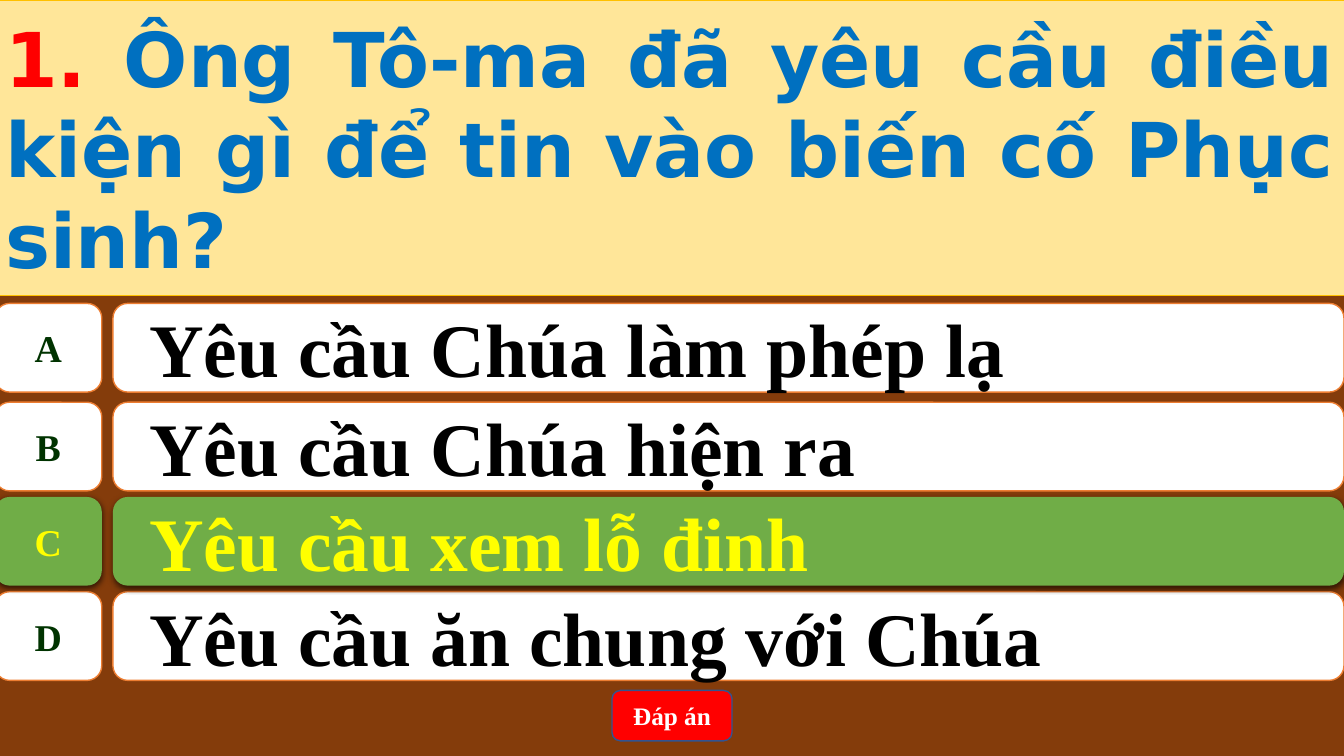
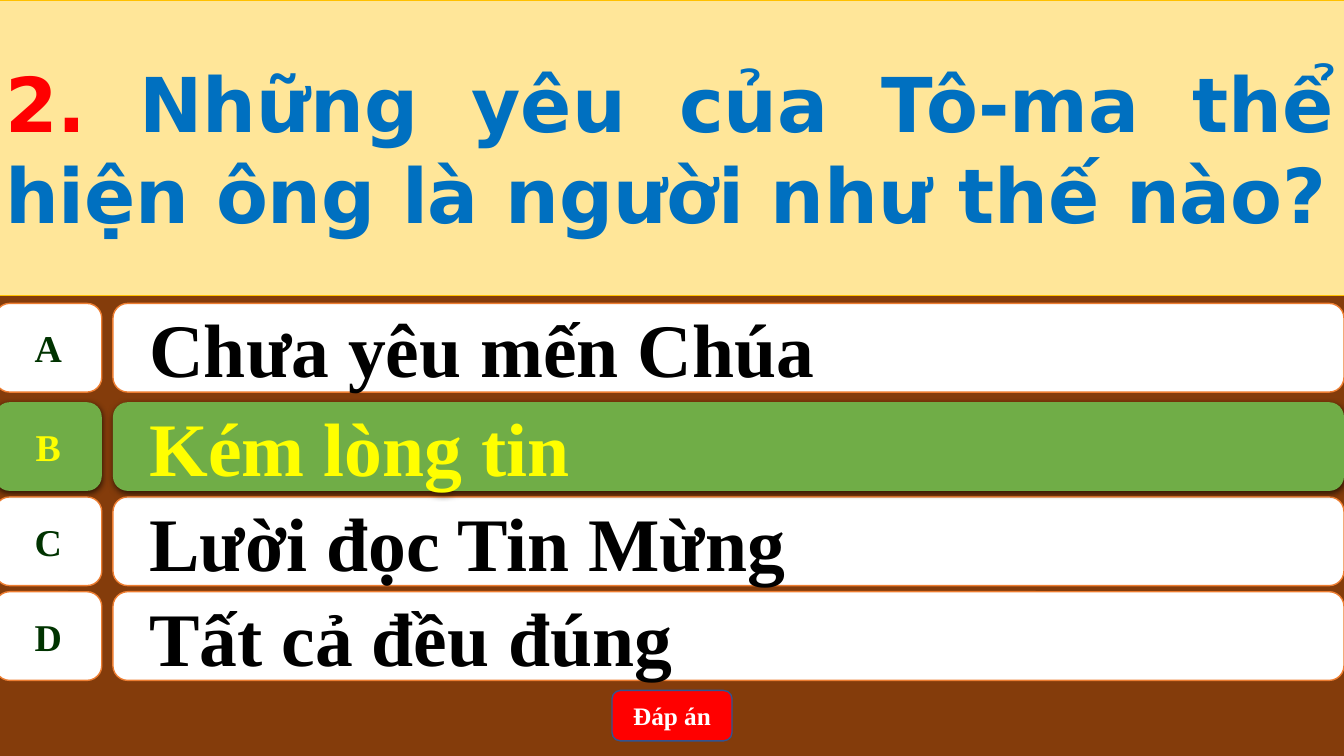
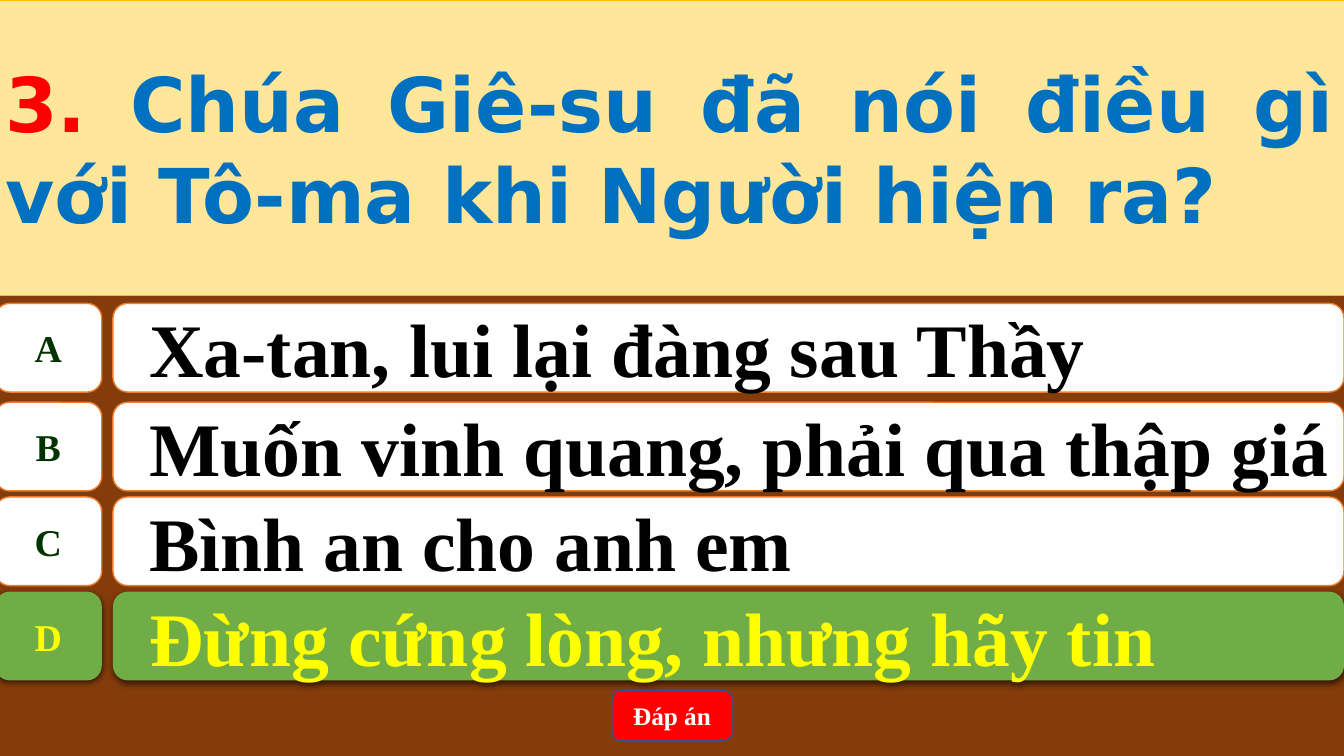
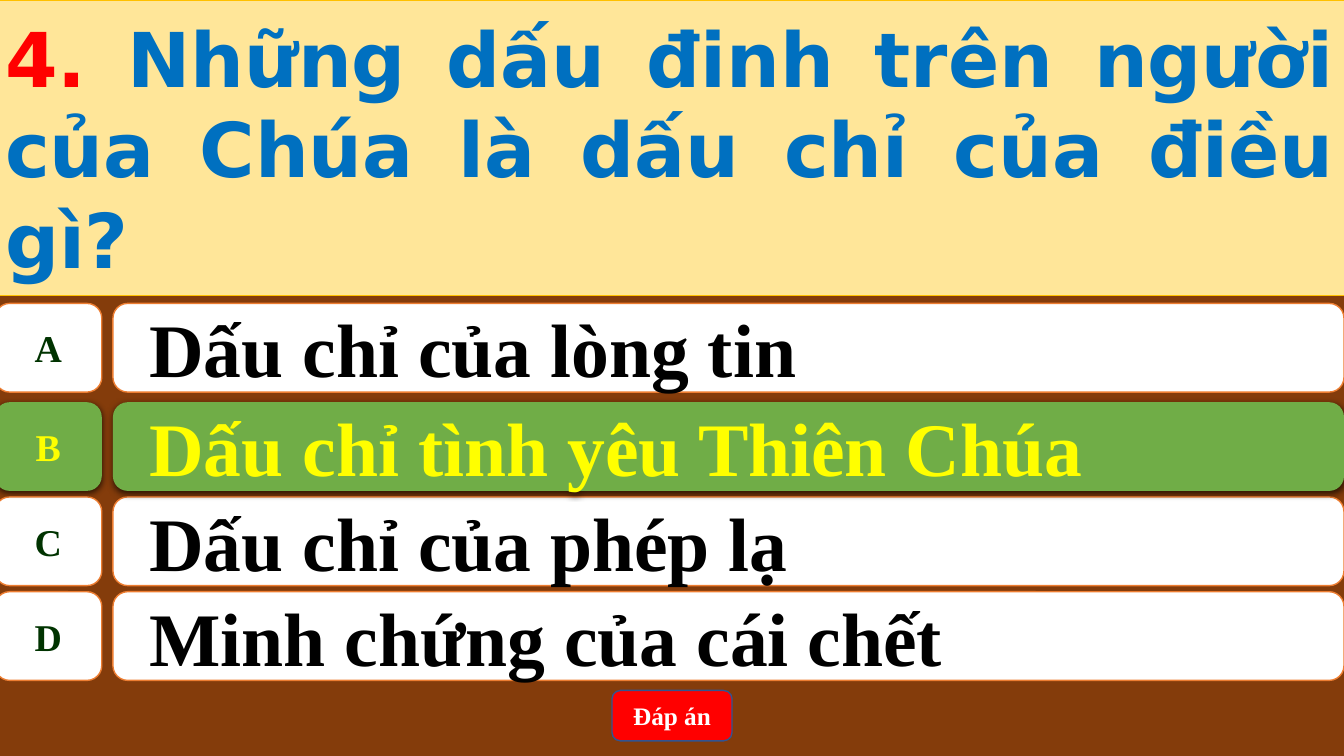
import dataclasses

import lxml.etree
import pptx
import pptx.dml.color
import pptx.enum.shapes
import pptx.enum.text
import pptx.oxml.ns
import pptx.util

EMU_PER_PX = 9144  # 100 px to the inch
ALIGN = pptx.enum.text.PP_ALIGN
SHAPE = pptx.enum.shapes.MSO_SHAPE
TITLE_ONLY = 5


@dataclasses.dataclass(frozen=True)
class Theme:
    background: str = "843C0B"
    band: str = "FFE699"
    band_line: str = "FFC000"
    number: str = "FF0000"
    question: str = "0070C0"
    row: str = "FFFFFF"
    row_line: str = "ED7D31"
    letter: str = "003300"
    answer: str = "000000"
    correct_row: str = "70AD47"
    correct_text: str = "FFFF00"
    button: str = "FF0000"
    button_line: str = "325491"
    button_text: str = "FFFFFF"
    shadow: str = "000000"
    question_font: str = "DejaVu Sans"
    answer_font: str = "Times New Roman"
    large: int = 54
    medium: int = 27
    small: int = 18


THEME = Theme()
LEFT, WIDTH = -5, 1339
BAND_HEIGHT = 293
ROW_TOPS = {"A": 301, "B": 399, "C": 493, "D": 587}
ROW_HEIGHT = 88
LETTER_WIDTH = 106
ANSWER_LEFT, ANSWER_WIDTH, ANSWER_INDENT = 112, 1221, 22

QUESTIONS = [
    ("Ông Tô-ma đã yêu cầu điều kiện gì để tin vào biến cố Phục sinh?", "C",
     ["Yêu cầu Chúa làm phép lạ", "Yêu cầu Chúa hiện ra",
      "Yêu cầu xem lỗ đinh", "Yêu cầu ăn chung với Chúa"]),
    ("Những yêu của Tô-ma thể hiện ông là người như thế nào?", "B",
     ["Chưa yêu mến Chúa", "Kém lòng tin",
      "Lười đọc Tin Mừng", "Tất cả đều đúng"]),
    ("Chúa Giê-su đã nói điều gì với Tô-ma khi Người hiện ra?", "D",
     ["Xa-tan, lui lại đàng sau Thầy", "Muốn vinh quang, phải qua thập giá",
      "Bình an cho anh em", "Đừng cứng lòng, nhưng hãy tin"]),
    ("Những dấu đinh trên người của Chúa là dấu chỉ của điều gì?", "B",
     ["Dấu chỉ của lòng tin", "Dấu chỉ tình yêu Thiên Chúa",
      "Dấu chỉ của phép lạ", "Minh chứng của cái chết"]),
]


def px(length):
    return pptx.util.Emu(length * EMU_PER_PX)


def rgb(color):
    return pptx.dml.color.RGBColor.from_string(color)


def write(shape, text, *, color, size, font=THEME.answer_font,
          align=ALIGN.CENTER, indent=0, wrap=True):
    """Append a bold run to the shape's first paragraph and format both."""
    frame = shape.text_frame
    frame.auto_size = pptx.enum.text.MSO_AUTO_SIZE.NONE
    frame.vertical_anchor = pptx.enum.text.MSO_ANCHOR.MIDDLE
    frame.word_wrap = wrap
    paragraph = frame.paragraphs[0]
    paragraph.alignment = align
    if indent:
        paragraph._p.get_or_add_pPr().set("marL", str(px(indent)))
    run = paragraph.add_run()
    run.text = text
    run.font.name = font
    run.font.size = pptx.util.Pt(size)
    run.font.bold = True
    run.font.color.rgb = rgb(color)


def add_shadow(shape):
    qn = pptx.oxml.ns.qn
    effects = shape._element.spPr.find(qn("a:effectLst"))
    shadow = lxml.etree.SubElement(
        effects, qn("a:outerShdw"), blurRad=str(pptx.util.Pt(4.5)),
        dist=str(pptx.util.Pt(1.5)), dir="5400000", rotWithShape="0")
    color = lxml.etree.SubElement(shadow, qn("a:srgbClr"), val=THEME.shadow)
    lxml.etree.SubElement(color, qn("a:alpha"), val="63000")


class QuizDeck:
    def __init__(self):
        self.presentation = pptx.Presentation()
        self.presentation.slide_width = px(1333)
        self.presentation.slide_height = px(750)
        fill = self.presentation.slide_master.background.fill
        fill.solid()
        fill.fore_color.rgb = rgb(THEME.background)
        self.slide = None

    def new_slide(self):
        layout = self.presentation.slide_layouts[TITLE_ONLY]
        self.slide = self.presentation.slides.add_slide(layout)

    def paint(self, shape, fill, line=None, line_width=1):
        shape.shadow.inherit = False
        shape.fill.solid()
        shape.fill.fore_color.rgb = rgb(fill)
        if line:
            shape.line.color.rgb = rgb(line)
            shape.line.width = pptx.util.Pt(line_width)
        else:
            shape.line.fill.background()

    def box(self, kind, left, top, width, height, fill, line=None):
        shape = self.slide.shapes.add_shape(
            kind, px(left), px(top), px(width), px(height))
        self.paint(shape, fill, line)
        return shape

    def question(self, number, text):
        title = self.slide.shapes.title
        title.left, title.top = px(LEFT), px(0)
        title.width, title.height = px(WIDTH), px(BAND_HEIGHT)
        self.paint(title, THEME.band, THEME.band_line, 0.5)
        style = {"size": THEME.large, "font": THEME.question_font,
                 "align": ALIGN.JUSTIFY}
        write(title, f"{number}. ", color=THEME.number, **style)
        write(title, text, color=THEME.question, **style)

    def answer(self, letter, text, correct):
        top = ROW_TOPS[letter]
        fill, line = ((THEME.correct_row, None) if correct
                      else (THEME.row, THEME.row_line))
        answer_box = self.box(SHAPE.ROUNDED_RECTANGLE, ANSWER_LEFT, top,
                              ANSWER_WIDTH, ROW_HEIGHT, fill, line)
        letter_box = self.box(SHAPE.FLOWCHART_ALTERNATE_PROCESS, LEFT, top,
                              LETTER_WIDTH, ROW_HEIGHT, fill, line)
        if correct:
            add_shadow(answer_box)
            add_shadow(letter_box)
        write(answer_box, text, size=THEME.large, align=ALIGN.LEFT,
              color=THEME.correct_text if correct else THEME.answer,
              indent=ANSWER_INDENT)
        write(letter_box, letter, size=THEME.medium, wrap=False,
              color=THEME.correct_text if correct else THEME.letter)

    def button(self, text):
        shape = self.box(SHAPE.ROUNDED_RECTANGLE, 607, 685, 119, 50,
                         THEME.button, THEME.button_line)
        write(shape, text, size=THEME.small, color=THEME.button_text)


def main():
    deck = QuizDeck()
    for number, (question, correct, answers) in enumerate(QUESTIONS, start=1):
        deck.new_slide()
        deck.question(number, question)
        deck.button("Đáp án")
        # The correct row comes last so that its shadow lies on its neighbours.
        for letter, text in sorted(zip(ROW_TOPS, answers),
                                   key=lambda row: row[0] == correct):
            deck.answer(letter, text, letter == correct)
    deck.presentation.save("out.pptx")


if __name__ == "__main__":
    main()
